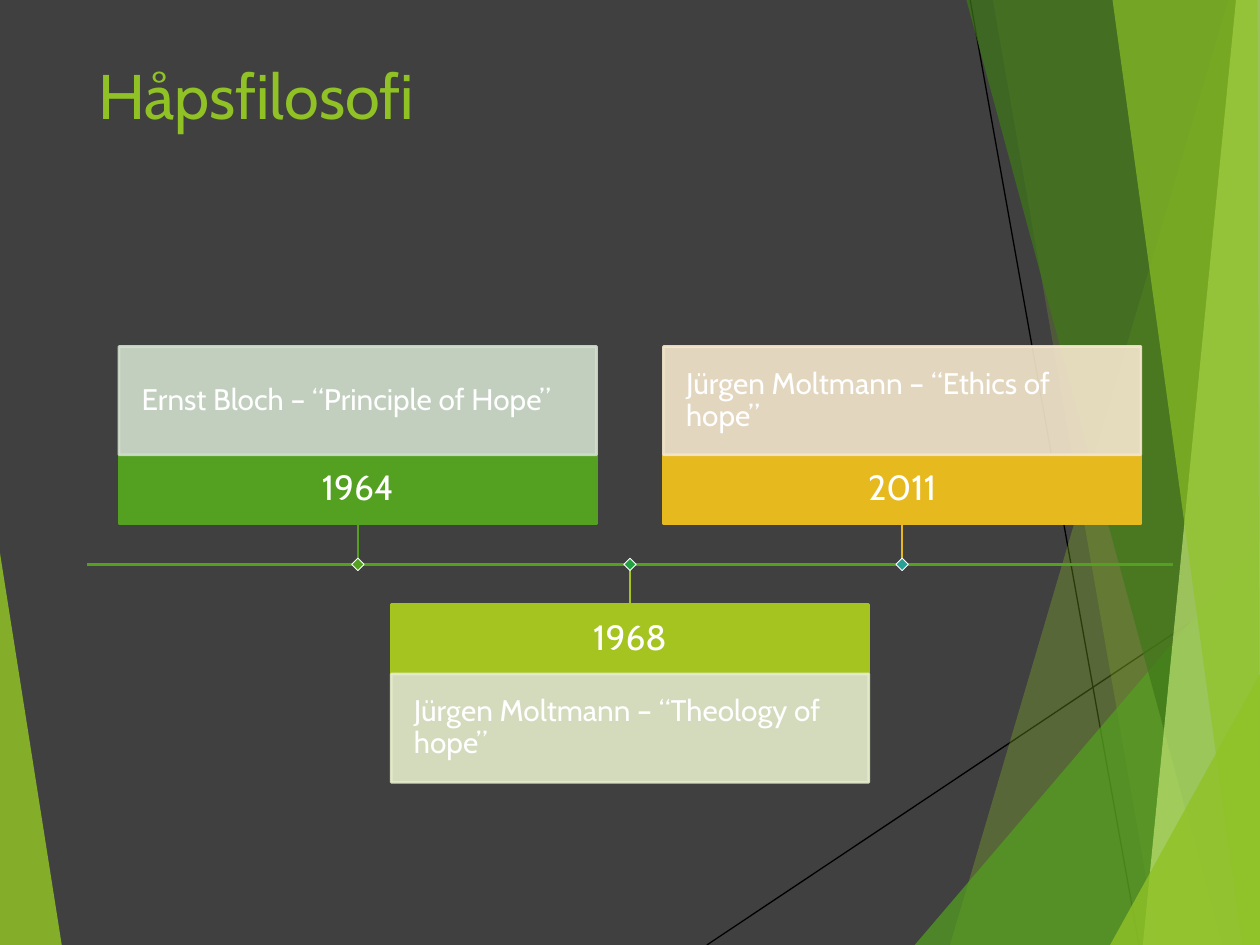
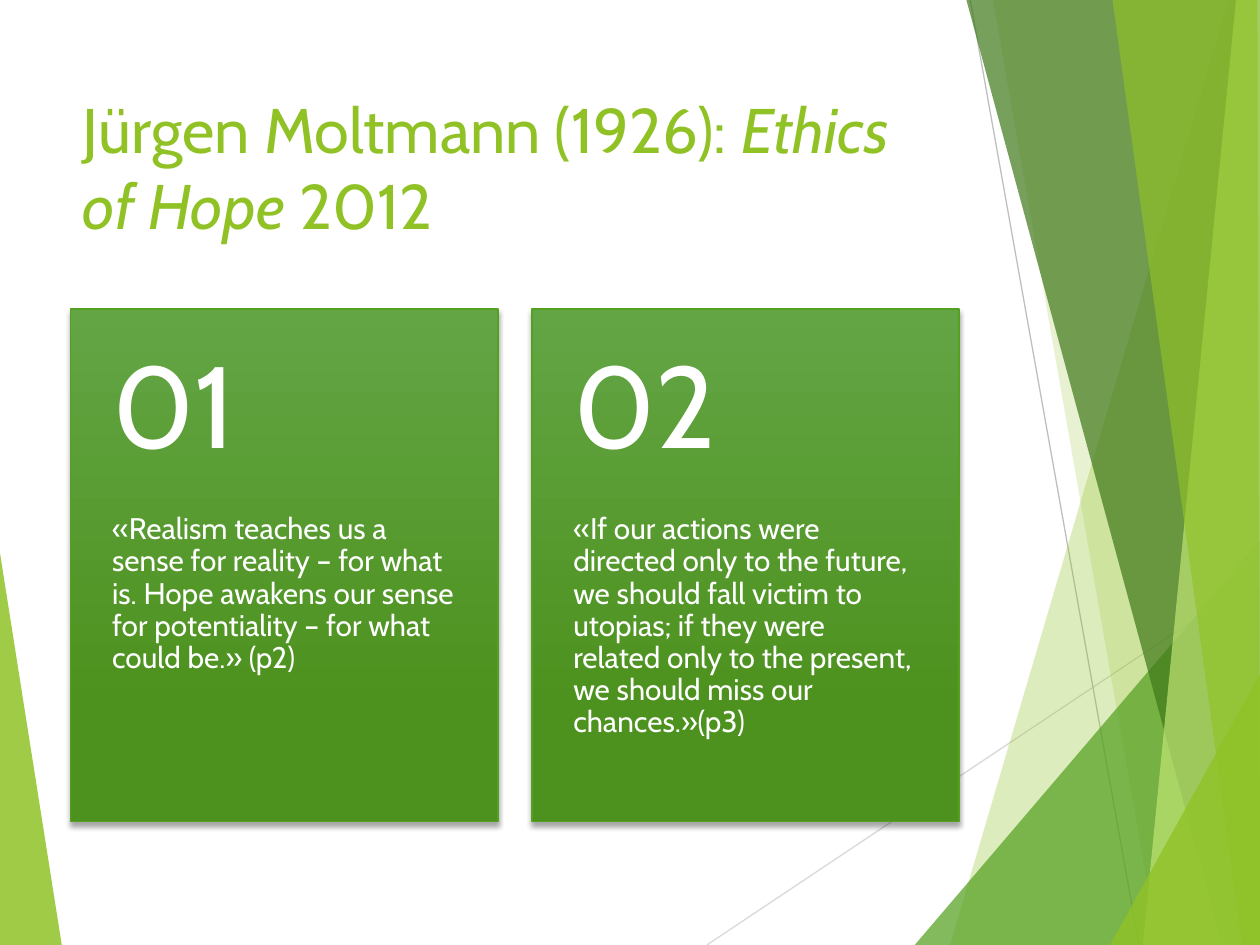
from lxml.etree import SubElement
from pptx import Presentation
from pptx.dml.color import RGBColor
from pptx.enum.shapes import MSO_CONNECTOR, MSO_SHAPE
from pptx.enum.text import MSO_ANCHOR, PP_ALIGN
from pptx.oxml.ns import qn
from pptx.util import Inches, Pt

FONT = "Cabin"
LIME, GREEN, WHITE = "90C226", "54A021", "FFFFFF"

WINGS = [
    (LIME, 85, [(0, 4.39), (0.49, 7.5), (0, 7.5)]),
    (LIME, 30, [(9.75, 0), (7.54, 7.5), (10, 7.5), (10, 0)]),
    (LIME, 20, [(7.88, 0), (9.19, 7.5), (10, 7.5), (10, 0)]),
    (GREEN, 72, [(7.26, 7.5), (10, 4.29), (10, 7.5)]),
    ("3F7819", 70, [(7.67, 0), (9.7, 7.5), (10, 7.5), (10, 0)]),
    ("C0E474", 70, [(9.81, 0), (9.07, 7.5), (10, 7.5), (10, 0)]),
    (LIME, 65, [(8.83, 0), (9.86, 7.5), (10, 7.5), (9.98, 0)]),
    (LIME, 80, [(8.81, 7.5), (10, 5.35), (10, 7.5)]),
]

EVENTS = [
    ("1964", "Ernst Bloch – “Principle of Hope”", GREEN, "D1DFCD", GREEN),
    ("1968", "Jürgen Moltmann – “Theology of hope”", "A5C41F", "E5ECCB", "24A043"),
    ("2011", "Jürgen Moltmann – “Ethics of hope”", "E6B91E", "F5E7CD", "28A094"),
]

QUOTES = [
    "«Realism teaches us a sense for reality – for what is. Hope awakens our "
    "sense for potentiality – for what could be.» (p2)",
    "«If our actions were directed only to the future, we should fall victim to "
    "utopias; if they were related only to the present, we should miss our "
    "chances.»(p3)",
]


def color(code):
    return RGBColor.from_string(code)


def fade(shape, alpha):
    for node in list(shape.element.spPr.iter(qn("a:srgbClr"))):
        SubElement(node, qn("a:alpha")).set("val", str(alpha * 1000))


class Deck:
    def __init__(self):
        self.show = Presentation()
        self.show.slide_width, self.show.slide_height = Inches(10), Inches(7.5)
        self.slide = None

    def page(self, back, rays):
        self.slide = self.show.slides.add_slide(self.show.slide_layouts[6])
        fill = self.slide.background.fill
        fill.solid()
        fill.fore_color.rgb = color(back)
        self.wing(*WINGS[0])
        self.line((5.61, 7.5), (10, 4.57), rays[0], 0.75)
        self.line((7.7, 0), (9.04, 7.5), rays[1], 0.75)
        for wing in WINGS[1:]:
            self.wing(*wing)

    def wing(self, tint, alpha, points):
        spots = [(Inches(x), Inches(y)) for x, y in points]
        pen = self.slide.shapes.build_freeform(*spots[0], scale=1)
        pen.add_line_segments(spots[1:], close=True)
        shape = pen.convert_to_shape()
        shape.shadow.inherit = False
        shape.fill.solid()
        shape.fill.fore_color.rgb = color(tint)
        shape.line.fill.background()
        fade(shape, alpha)

    def line(self, start, end, tint, width):
        ends = [Inches(v) for v in (*start, *end)]
        link = self.slide.shapes.add_connector(MSO_CONNECTOR.STRAIGHT, *ends)
        link.line.color.rgb = color(tint)
        link.line.width = Pt(width)
        SubElement(link.element.spPr, qn("a:effectLst"))
        return link

    def rect(self, box, tint, edge, width):
        shape = self.slide.shapes.add_shape(
            MSO_SHAPE.RECTANGLE, *[Inches(v) for v in box])
        shape.shadow.inherit = False
        shape.fill.solid()
        shape.fill.fore_color.rgb = color(tint)
        shape.line.color.rgb = color(edge)
        shape.line.width = Pt(width)
        return shape

    def panel(self, box):
        shape = self.rect(box, GREEN, GREEN, 1)
        shape.fill.gradient()
        shape.fill.gradient_angle = 270
        stops = zip(shape.fill.gradient_stops, [(0, "63A545"), (0.78, "4D921E")])
        for stop, (place, tint) in stops:
            stop.position = place
            stop.color.rgb = color(tint)
        glow = SubElement(shape.element.spPr.find(qn("a:effectLst")),
                          qn("a:outerShdw"), blurRad=str(Pt(3)), dist=str(Pt(2)),
                          dir="5400000", rotWithShape="0")
        shade = SubElement(glow, qn("a:srgbClr"), val="000000")
        SubElement(shade, qn("a:alpha"), val="35000")

    def box(self, box):
        return self.slide.shapes.add_textbox(*[Inches(v) for v in box])

    def text(self, shape, runs, size, tint=WHITE, pads=(0.1, 0.05, 0.1, 0.05),
             anchor=MSO_ANCHOR.TOP, align=PP_ALIGN.LEFT, space=0.9):
        frame = shape.text_frame
        frame.word_wrap = True
        frame.vertical_anchor = anchor
        (frame.margin_left, frame.margin_top,
         frame.margin_right, frame.margin_bottom) = [Inches(p) for p in pads]
        para = frame.paragraphs[0]
        para.alignment = align
        para.line_spacing = space
        for words, slant in runs:
            run = para.add_run()
            run.text = words
            run.font.name = FONT
            run.font.size = Pt(size)
            run.font.italic = slant
            run.font.color.rgb = color(tint)

    def title(self, box, runs):
        self.text(self.box(box), runs, 36, LIME, space=1.0)


def draw_time(deck):
    deck.page("404040", ("000000", "000000"))
    deck.title((0.68, 0.4, 8.63, 1.45), [("Håpsfilosofi", False)])
    axis, wide, head, body, stem, dot = 4.48, 3.79, 0.55, 0.86, 0.32, 0.07
    deck.line((0.69, axis), (9.31, axis), GREEN, 1.5)
    for i, (year, work, tint, pale, mark) in enumerate(EVENTS):
        mid = 5 + (i - 1) * 2.16
        left, above = mid - wide / 2, i % 2 == 0
        top = axis - stem - head if above else axis + stem
        tag = deck.rect((left, top, wide, head), tint, tint, 1.5)
        deck.text(tag, [(year, False)], 20, pads=[0.11] * 4,
                  anchor=MSO_ANCHOR.MIDDLE, align=PP_ALIGN.CENTER)
        low = top - body if above else top + head
        note = deck.rect((left, low, wide, body), pale, pale, 1.5)
        fade(note, 90)
        deck.text(note, [(work, False)], 17, pads=[0.18] * 4,
                  anchor=MSO_ANCHOR.MIDDLE)
        link = deck.line((mid, top), (mid, axis), tint, 1)
        link.begin_connect(tag, 2 if above else 0)
        gem = deck.rect((mid - dot / 2, axis - dot / 2, dot, dot), mark, WHITE, 0.5)
        gem.rotation = 45


def draw_quotes(deck):
    deck.page(WHITE, ("D9D9D9", "BFBFBF"))
    deck.title((0.56, 0.67, 7.05, 1.44), [
        ("Jürgen Moltmann (1926): ", False), ("Ethics of Hope", True),
        (" 2012", False)])
    top, wide, tall, head = 2.45, 3.39, 4.07, 1.63
    for i, quote in enumerate(QUOTES):
        left = 0.56 + i * 3.66
        deck.panel((left, top, wide, tall))
        deck.text(deck.box((left, top + head, wide, tall - head)),
                  [(quote, False)], 17, pads=(0.33, 0, 0.33, 0.36))
        deck.text(deck.box((left, top, wide, head)), [(f"{i + 1:02}", False)], 66,
                  pads=(0.33, 0.18, 0.33, 0.18), anchor=MSO_ANCHOR.MIDDLE)


def main():
    deck = Deck()
    draw_time(deck)
    draw_quotes(deck)
    deck.show.save("out.pptx")


if __name__ == "__main__":
    main()
